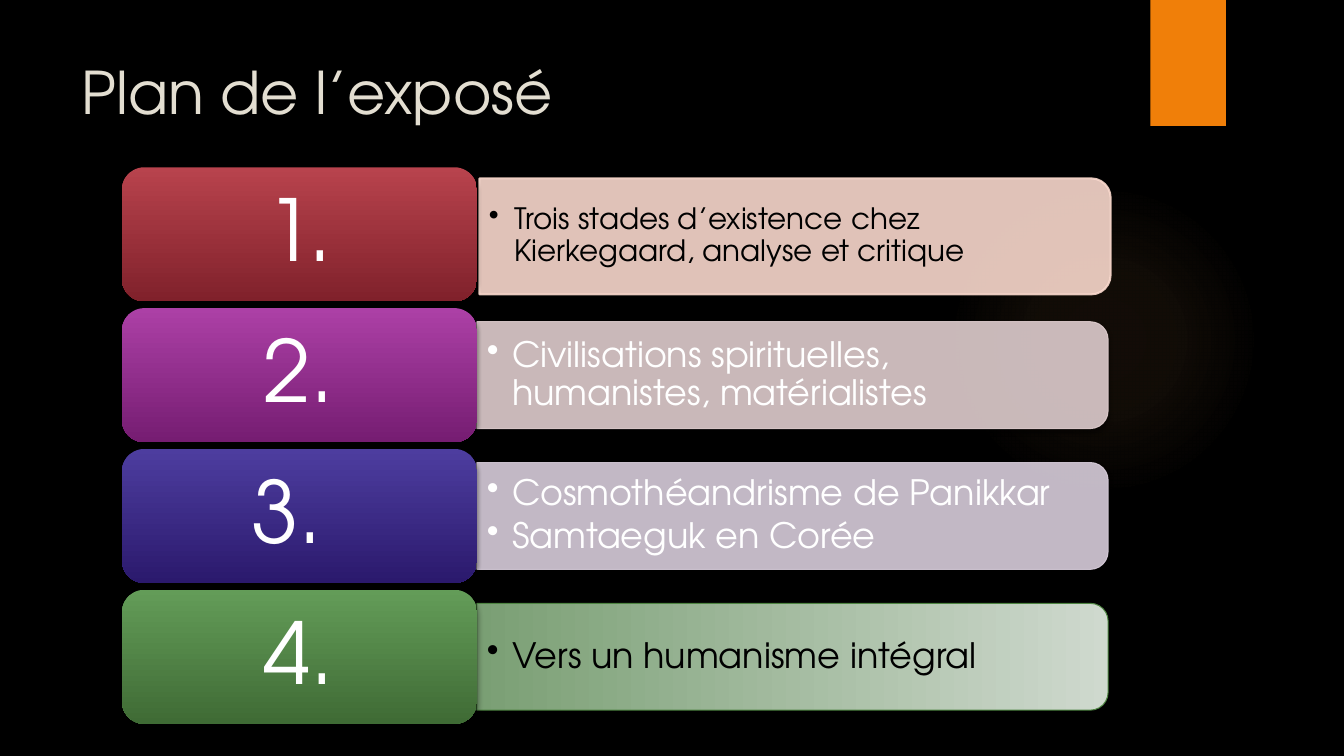
"""Build the "Plan de l'exposé" slide: four numbered boxes with their topic bars."""
from dataclasses import dataclass

from lxml import etree
from pptx import Presentation
from pptx import util as u
from pptx.dml.color import RGBColor
from pptx.enum import shapes, text
from pptx.oxml import parse_xml
from pptx.oxml.ns import nsdecls, qn


@dataclass(frozen=True)
class Theme:
    font: str = "TeX Gyre Adventor"
    background: str = "000000"
    accent: str = "F07F09"
    glow: str = "F9B268"
    title: str = "E3DED1"
    light: str = "FFFFFF"
    dark: str = "000000"
    title_size: int = 42
    number_size: int = 61
    topic_size: int = 25
    first_topic_size: int = 21


theme = Theme()
ROWS = [
    ("1.", ("B8434D", "80212B"), ["Trois stades d’existence chez Kierkegaard, analyse et critique"],
     ("F9D8CC",), "F9D8CC", theme.dark, theme.first_topic_size),
    ("2.", ("AC40A6", "761D72"), ["Civilisations spirituelles, humanistes, matérialistes"],
     ("DFCDCE",), "DFCDCE", theme.light, theme.topic_size),
    ("3. ", ("4D3D9F", "2B196D"), ["Cosmothéandrisme de Panikkar", "Samtaeguk en Corée"],
     ("D8CDDB",), "D8CDDB", theme.light, theme.topic_size),
    ("4.", ("639C58", "3F6B35"), ["Vers un humanisme intégral"],
     ("CFD9CE", "7A9F74"), "4E8542", theme.dark, theme.topic_size),
]

presentation = Presentation()
presentation.slide_width, presentation.slide_height = u.Inches(13.33), u.Inches(7.5)
slide = presentation.slides.add_slide(presentation.slide_layouts[6])
slide.background.fill.solid()
slide.background.fill.fore_color.rgb = RGBColor.from_string(theme.background)


def add_panel(kind, box, colors, shadow=None):
    """Add a borderless shape with one or two colours; shadow is opacity, blur, distance."""
    shape = slide.shapes.add_shape(kind, *map(u.Inches, box))
    shape.shadow.inherit = False
    shape.line.fill.background()
    if len(colors) == 1:
        shape.fill.solid()
        shape.fill.fore_color.rgb = RGBColor.from_string(colors[0])
    else:
        shape.fill.gradient()
        shape.fill.gradient_angle = 270
        for stop, color in zip(shape.fill.gradient_stops, colors):
            stop.color.rgb = RGBColor.from_string(color)
    if shadow:
        opacity, blur, distance = shadow
        shape._element.spPr.find(qn("a:effectLst")).append(parse_xml(
            f'<a:outerShdw {nsdecls("a")} blurRad="{u.Pt(blur)}" dist="{u.Pt(distance)}" '
            f'dir="5400000" rotWithShape="0"><a:srgbClr val="000000">'
            f'<a:alpha val="{opacity * 1000}"/></a:srgbClr></a:outerShdw>'))
    return shape


def add_label(box, lines, size, color, margins=(0.1, 0.05), after=0, bullet=False, centred=False):
    """Add a wrapped text box with one paragraph per line."""
    frame = slide.shapes.add_textbox(*map(u.Inches, box)).text_frame
    frame.word_wrap = True
    frame.margin_left = frame.margin_right = u.Inches(margins[0])
    frame.margin_top = frame.margin_bottom = u.Inches(margins[1])
    frame.text = "\n".join(lines)
    for paragraph in frame.paragraphs:
        if after:
            frame.vertical_anchor = text.MSO_ANCHOR.MIDDLE
            paragraph.line_spacing = 0.9
            paragraph.space_after = u.Pt(after)
        if centred:
            paragraph.alignment = text.PP_ALIGN.CENTER
        if bullet:
            properties = paragraph._p.get_or_add_pPr()
            properties.set("marL", str(u.Inches(0.25)))
            properties.set("indent", str(u.Inches(-0.25)))
            etree.SubElement(properties, qn("a:buChar"), char="•")
        paragraph.font.name = theme.font
        paragraph.font.size = u.Pt(size)
        paragraph.font.color.rgb = RGBColor.from_string(color)


glow = add_panel(shapes.MSO_SHAPE.OVAL, (9.41, 1.83, 3.08, 3.08), (theme.glow,))
stops = "".join(
    f'<a:gs pos="{position}000"><a:srgbClr val="{theme.glow}"><a:alpha val="{opacity}000"/></a:srgbClr></a:gs>'
    for position, opacity in ((0, 7), (36, 6), (69, 0)))
solid = glow._element.spPr.find(qn("a:solidFill"))
solid.getparent().replace(solid, parse_xml(
    f'<a:gradFill {nsdecls("a")} rotWithShape="1"><a:gsLst>{stops}</a:gsLst><a:path path="circle">'
    '<a:fillToRect l="50000" t="50000" r="50000" b="50000"/></a:path></a:gradFill>'))

add_panel(shapes.MSO_SHAPE.RECTANGLE, (11.41, 0, 0.75, 1.25), (theme.accent,), (45, 3, 2))
add_label((0.71, 0.5, 10.29, 1.53), ["Plan de l’exposé"], theme.title_size, theme.title)

BOX_TOP, BOX_HEIGHT, PITCH, BAR_LENGTH = 1.66, 1.33, 1.397, 6.26
for index, (number, box_colors, topics, bar_colors, border, ink, size) in enumerate(ROWS):
    top = BOX_TOP + index * PITCH
    middle = top + BOX_HEIGHT / 2
    first, last = index == 0, index == len(ROWS) - 1
    thickness, centre_x, text_left, text_height = (
        (1.15, 7.885, 4.75, 1.03) if first else (1.06, 7.86, 4.73, 0.96))
    bar_middle = middle + (0.02 if first else 0)

    bar = add_panel(shapes.MSO_SHAPE.ROUND_2_SAME_RECTANGLE,
                    (centre_x - thickness / 2, bar_middle - BAR_LENGTH / 2, thickness, BAR_LENGTH),
                    bar_colors, None if first or last else (45, 3, 2))
    bar.rotation = 90
    bar.line.color.rgb = RGBColor.from_string(border)
    bar.line.width = u.Pt(1.5 if first else 0.75)
    if not last:
        for color in bar._element.spPr.findall(".//" + qn("a:solidFill") + "/" + qn("a:srgbClr")):
            etree.SubElement(color, qn("a:alpha"), val="90000")
    add_label((text_left, bar_middle - text_height / 2, 6.21, text_height), topics, size, ink,
              after=size * 0.15, bullet=True)

    add_panel(shapes.MSO_SHAPE.ROUNDED_RECTANGLE, (1.21, top, 3.52, BOX_HEIGHT), box_colors,
              (60, 5, 3) if last else (45, 3, 2))
    add_label((1.27, top + 0.065, 3.39, 1.2), [number], theme.number_size, theme.light,
              margins=(0.25, 0.13), after=theme.number_size * 0.35, centred=True)

presentation.save("out.pptx")
